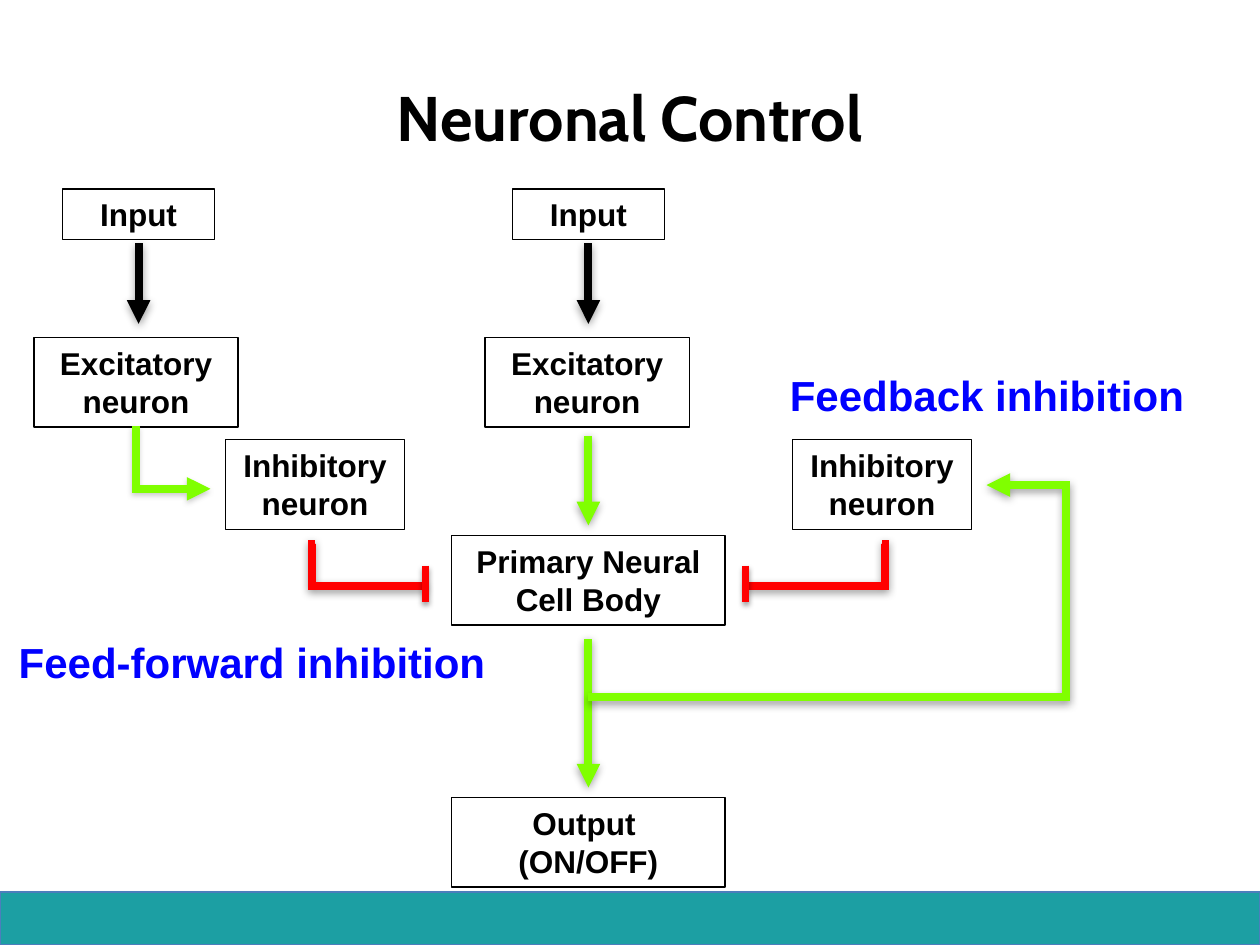
from lxml import etree
from pptx import Presentation
from pptx.dml.color import RGBColor
from pptx.enum import shapes, text
from pptx.oxml import ns
from pptx.util import Inches, Pt

BLACK = RGBColor(0x00, 0x00, 0x00)
WHITE = RGBColor(0xFF, 0xFF, 0xFF)
GREEN = RGBColor(0x80, 0xFF, 0x00)
RED = RGBColor(0xFF, 0x00, 0x00)
BLUE = RGBColor(0x00, 0x00, 0xFF)
GREY = RGBColor(0x80, 0x80, 0x80)
TEAL = RGBColor(0x1C, 0x9F, 0xA3)
BAND_EDGE = RGBColor(0x4B, 0x7E, 0xBC)

# Box sizes by role, and boxes as (role, wording, centre x, top)
SIZES = {"input": (1.21, 0.4), "excitatory": (1.62, 0.71),
         "inhibitory": (1.42, 0.71), "main": (2.17, 0.71)}
BOXES = [
    ("input", ["Input"], 1.1, 1.5),
    ("input", ["Input"], 4.67, 1.5),
    ("excitatory", ["Excitatory neuron"], 1.08, 2.68),
    ("excitatory", ["Excitatory neuron"], 4.66, 2.68),
    ("inhibitory", ["Inhibitory neuron"], 2.5, 3.49),
    ("inhibitory", ["Inhibitory neuron"], 7, 3.49),
    ("main", ["Primary Neural Cell Body"], 4.67, 4.25),
    ("main", ["Output ", "(ON/OFF)"], 4.67, 6.33),
]

# Vertical arrows: x, top, bottom, colour
ARROWS = [(1.1, 1.93, 2.57, BLACK), (4.67, 1.93, 2.57, BLACK),
          (4.67, 3.46, 4.17, GREEN), (4.67, 5.07, 6.25, GREEN)]

# Elbows: from, to, bend as a share of the width, colour, arrowhead, shadow colour, blur
ELBOWS = [
    ((7, 4.32), (5.92, 4.65), -0.02, RED, False, BLACK, 5),
    ((2.5, 4.32), (3.38, 4.65), -0.03, RED, False, BLACK, 5),
    ((4.67, 5.53), (7.83, 3.85), 1.2, GREEN, True, BLACK, 5),
    ((1.08, 3.38), (1.67, 3.88), 0, GREEN, True, GREY, 3.1),
]
INHIBITION_BARS = [3.38, 5.92]

# Free text: wording, left, top, width, height, wrap, format, alignment, anchor
LABEL = {"name": "Arial", "size": Pt(24), "bold": True}
TITLE = {"name": "Cabin", "size": Pt(36), "bold": True}
BOX_FONT = {"name": "Arial", "size": Pt(18), "bold": True}
LEFT, CENTER = text.PP_ALIGN.LEFT, text.PP_ALIGN.CENTER
TOP, MIDDLE = text.MSO_ANCHOR.TOP, text.MSO_ANCHOR.MIDDLE
TEXTS = [
    ("Neuronal Control", 0.5, 0.3, 9, 1.25, True, TITLE, BLACK, CENTER, MIDDLE),
    ("Feed-forward inhibition", 0.05, 5, 3.92, 0.5, False, LABEL, BLUE, LEFT, TOP),
    ("Feedback inhibition", 6.17, 2.88, 4.08, 0.5, True, LABEL, BLUE, LEFT, TOP),
]


def add_shadow(part, color=BLACK, alpha=38, blur=5, distance=1.6):
    props = part._element.spPr
    for old in props.findall(ns.qn("a:effectLst")):
        props.remove(old)
    effects = etree.SubElement(props, ns.qn("a:effectLst"))
    outer = etree.SubElement(effects, ns.qn("a:outerShdw"), blurRad=str(int(Pt(blur))),
                             dist=str(int(Pt(distance))), dir="5400000",
                             algn="ctr", rotWithShape="0")
    tint = etree.SubElement(outer, ns.qn("a:srgbClr"), val=str(color))
    etree.SubElement(tint, ns.qn("a:alpha"), val=str(alpha * 1000))


def add_line(slide, start, end, color, width=4.5, head=False,
             bend=None, shadow=BLACK, blur=5):
    kind = shapes.MSO_CONNECTOR.STRAIGHT if bend is None else shapes.MSO_CONNECTOR.ELBOW
    link = slide.shapes.add_connector(kind, *map(Inches, start + end))
    link.line.color.rgb = color
    link.line.width = Pt(width)
    props = link._element.spPr
    outline = props.find(ns.qn("a:ln"))
    etree.SubElement(outline, ns.qn("a:miter"), lim="800000")
    if head:
        etree.SubElement(outline, ns.qn("a:tailEnd"), type="triangle")
    if bend is not None:
        adjust = props.find(ns.qn("a:prstGeom")).get_or_add_avLst()
        etree.SubElement(adjust, ns.qn("a:gd"), name="adj1",
                         fmla=f"val {round(bend * 100000)}")
    add_shadow(link, shadow, blur=blur)


def write(frame, lines, style, color, align, anchor, wrap=True):
    frame.word_wrap = wrap
    frame.vertical_anchor = anchor
    for i, line in enumerate(lines):
        paragraph = frame.add_paragraph() if i else frame.paragraphs[0]
        paragraph.alignment = align
        run = paragraph.add_run()
        run.text = line
        run.font.color.rgb = color
        for key, value in style.items():
            setattr(run.font, key, value)


def add_rect(slide, left, top, width, height, fill, edge):
    rect = slide.shapes.add_shape(shapes.MSO_SHAPE.RECTANGLE,
                                  *map(Inches, (left, top, width, height)))
    rect.shadow.inherit = False
    rect.fill.solid()
    rect.fill.fore_color.rgb = fill
    rect.line.color.rgb = edge
    rect.line.width = Pt(0.75)
    return rect


def main():
    deck = Presentation()
    deck.slide_width, deck.slide_height = Inches(10), Inches(7.5)
    slide = deck.slides.add_slide(deck.slide_layouts[6])

    # Footer band
    band = add_rect(slide, 0, 7.08, 10, 0.42, TEAL, BAND_EDGE)
    add_shadow(band, alpha=35, blur=3.1, distance=1.8)

    # Neuron boxes
    for role, lines, center, top in BOXES:
        width, height = SIZES[role]
        box = add_rect(slide, center - width / 2, top, width, height, WHITE, BLACK)
        write(box.text_frame, lines, BOX_FONT, BLACK, CENTER, TOP)

    # Pathways
    for x, top, bottom, color in ARROWS:
        add_line(slide, (x, top), (x, bottom), color, head=True)
    for start, end, bend, color, head, shadow, blur in ELBOWS:
        add_line(slide, start, end, color, head=head, bend=bend, shadow=shadow, blur=blur)
    for x in INHIBITION_BARS:
        add_line(slide, (x, 4.49), (x, 4.78), RED, width=4, blur=3.1)

    # Title and labels
    for words, left, top, width, height, wrap, style, color, align, anchor in TEXTS:
        label = slide.shapes.add_textbox(*map(Inches, (left, top, width, height)))
        write(label.text_frame, [words], style, color, align, anchor, wrap)

    deck.save("out.pptx")


if __name__ == "__main__":
    main()
